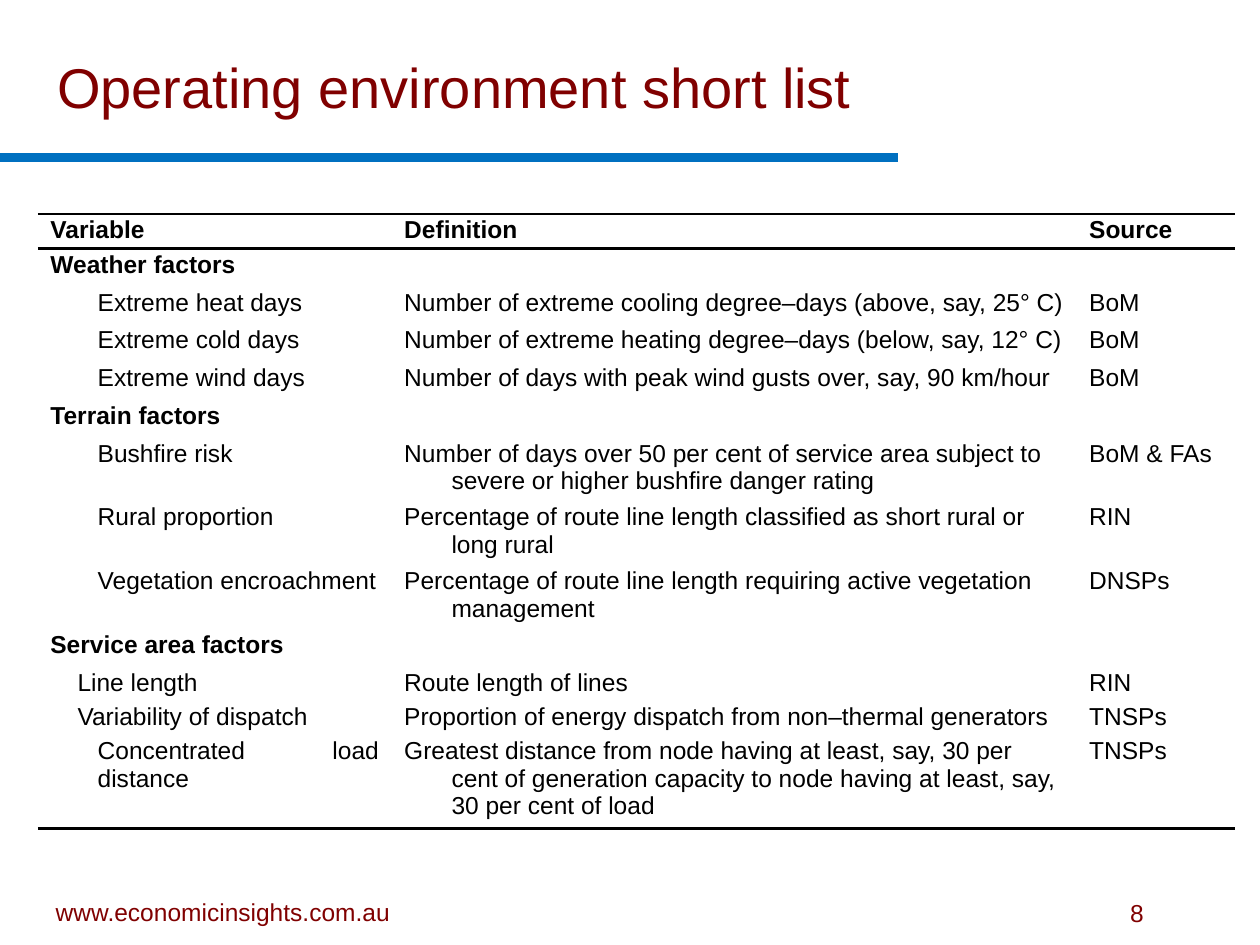
from lxml.etree import SubElement
from pptx import Presentation
from pptx.dml.color import RGBColor
from pptx.enum.shapes import MSO_CONNECTOR as Connector
from pptx.enum.text import MSO_ANCHOR as Anchor, PP_ALIGN as Align
from pptx.oxml import parse_xml
from pptx.oxml.ns import nsdecls, qn
from pptx.util import Pt

MAROON, BLACK, BLUE = "800000", "000000", "0070C0"
NO_GRID_STYLE = "{2D5ABB26-0587-4C30-8999-92F81FD0307C}"
HANG, SHORT_INDENT = 27, 15.5
COLUMN_WIDTHS = (202.2, 391.4, 90.4)
ROW_HEIGHTS = [14.4] + [21.6] * 9 + [15.1] * 3
TABLE_HEIGHT = 351.4
HEADINGS = ("Variable", "Definition", "Source")
FACTORS = {
    "Weather factors": [
        ("Extreme heat days", "Number of extreme cooling degree–days (above, say, 25° C)", "BoM"),
        ("Extreme cold days", "Number of extreme heating degree–days (below, say, 12° C)", "BoM"),
        ("Extreme wind days", "Number of days with peak wind gusts over, say, 90 km/hour", "BoM"),
    ],
    "Terrain factors": [
        ("Bushfire risk", "Number of days over 50 per cent of service area subject to "
         "severe or higher bushfire danger rating", "BoM & FAs"),
        ("Rural proportion", "Percentage of route line length classified as short rural "
         "or long rural", "RIN"),
        ("Vegetation encroachment", "Percentage of route line length requiring active "
         "vegetation management", "DNSPs"),
    ],
    "Service area factors": [
        ("Line length", "Route length of lines", "RIN"),
        ("Variability of dispatch", "Proportion of energy dispatch from non–thermal generators",
         "TNSPs"),
        ("Concentrated load distance", "Greatest distance from node having at least, say, "
         "30 per cent of generation capacity to node having at least, say, "
         "30 per cent of load", "TNSPs"),
    ],
}
SHORT_INDENTED = ("Line length", "Variability of dispatch")


def rgb(value):
    """Turn a hex string into a colour."""
    return RGBColor.from_string(value)


def apply(target, values):
    """Set each attribute named in a dict."""
    for name, value in values.items():
        setattr(target, name, value)


def write(paragraph, words, size, color, bold=False):
    """Add one formatted run to a paragraph."""
    run = paragraph.add_run()
    run.text = words
    apply(run.font, {"name": "Arial", "size": Pt(size), "bold": bold})
    run.font.color.rgb = rgb(color)


def add_label(slide, box, words, size, anchor=Anchor.TOP, align=Align.LEFT, wrap=True):
    """Add a maroon line of text."""
    frame = slide.shapes.add_textbox(*map(Pt, box)).text_frame
    apply(frame, {"word_wrap": wrap, "vertical_anchor": anchor})
    frame.paragraphs[0].alignment = align
    write(frame.paragraphs[0], words, size, MAROON)


def add_rule(slide, start, end, color, weight):
    """Add a straight line without shadow."""
    rule = slide.shapes.add_connector(Connector.STRAIGHT, *map(Pt, start + end))
    rule.line.color.rgb = rgb(color)
    rule.line.width = Pt(weight)
    SubElement(rule._element.spPr, qn("a:effectLst"))


def set_borders(cell, sides):
    """Draw black borders on the given sides and clear the others."""
    black = f'<a:solidFill><a:srgbClr val="{BLACK}"/></a:solidFill>'
    for position, side in enumerate("LRTB"):
        paint = black if side in sides else "<a:noFill/>"
        cell._tc.get_or_add_tcPr().insert(position, parse_xml(
            f'<a:ln{side} {nsdecls("a")} w="{Pt(1.5)}">{paint}</a:ln{side}>'))


def fill_cell(cell, words, align, margin, indent, bold):
    """Format a table cell and write its text."""
    cell.fill.background()
    apply(cell, {"margin_left": Pt(7.2), "margin_right": Pt(7.2),
                 "margin_top": Pt(1.4), "margin_bottom": Pt(1.4)})
    paragraph = cell.text_frame.paragraphs[0]
    if words:
        paragraph.alignment = align
        properties = paragraph._p.get_or_add_pPr()
        properties.set("marL", str(Pt(margin)))
        properties.set("indent", str(Pt(indent)))
        write(paragraph, words, 14, BLACK, bold)
    ending = SubElement(paragraph._p, qn("a:endParaRPr"), sz="1400")
    SubElement(ending, qn("a:latin"), typeface="Arial")


def list_rows():
    """Return each row as texts, first-column indent and bold flag."""
    rows = [(HEADINGS, 0, True)]
    for group, members in FACTORS.items():
        rows.append(((group, "", ""), 0, True))
        rows += [(texts, SHORT_INDENT if texts[0] in SHORT_INDENTED else HANG, False)
                 for texts in members]
    return rows


def add_factor_table(slide):
    """Add the table of operating environment factors."""
    rows = list_rows()
    frame = slide.shapes.add_table(len(rows), len(HEADINGS), Pt(21.6), Pt(122.4),
                                   Pt(sum(COLUMN_WIDTHS)), Pt(TABLE_HEIGHT))
    table = frame.table
    apply(table, {"first_row": False, "horz_banding": False})
    table._tbl.tblPr.find(qn("a:tableStyleId")).text = NO_GRID_STYLE
    for column, width in zip(table.columns, COLUMN_WIDTHS):
        column.width = Pt(width)
    for row, height in zip(table.rows, ROW_HEIGHTS):
        row.height = Pt(height)
    frame.height = Pt(TABLE_HEIGHT)
    borders = {0: "TB", 1: "T", len(rows) - 1: "B"}
    for r, (texts, first_indent, bold) in enumerate(rows):
        for c, words in enumerate(texts):
            align = Align.LEFT if r == 0 or c == 1 else Align.JUSTIFY
            margin, indent = (first_indent, 0) if c == 0 else (HANG, -HANG)
            fill_cell(table.cell(r, c), words, align, margin, indent, bold)
            set_borders(table.cell(r, c), borders.get(r, ""))


def main():
    """Build and save the slide."""
    deck = Presentation()
    apply(deck, {"slide_width": Pt(720), "slide_height": Pt(540)})
    slide = deck.slides.add_slide(deck.slide_layouts[6])
    add_rule(slide, (0, 90), (513.4, 90), BLUE, 5)
    add_label(slide, (14, 508.3, 226.8, 24.5), "www.economicinsights.com.au", 14,
              Anchor.BOTTOM, Align.CENTER)
    add_label(slide, (638.8, 509.8, 31.7, 23.8), "8", 14, wrap=False)
    add_label(slide, (25.6, 26.3, 487.4, 45.4), "Operating environment short list", 32,
              Anchor.BOTTOM)
    add_factor_table(slide)
    deck.save("out.pptx")


if __name__ == "__main__":
    main()
